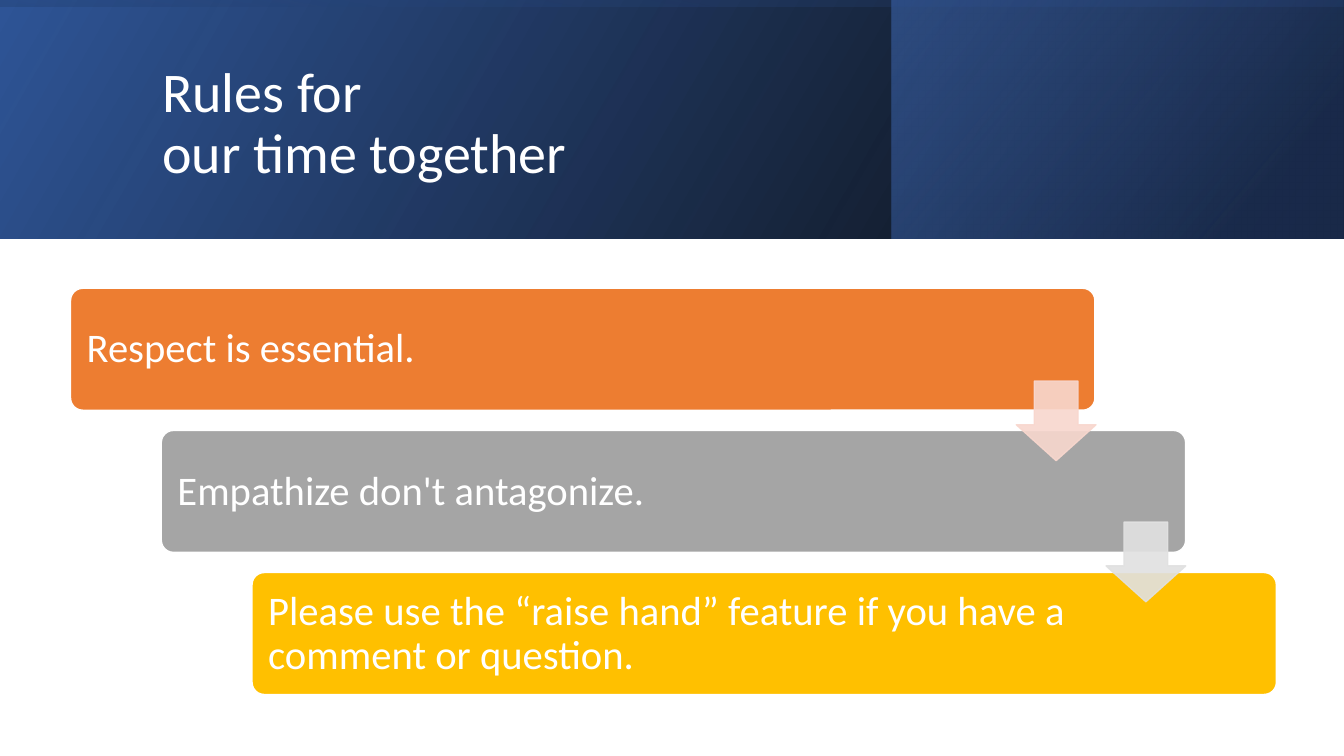
from lxml import etree
from pptx import Presentation, util as u
from pptx.dml.color import RGBColor
from pptx.enum import shapes, text
from pptx.oxml import parse_xml
from pptx.oxml.ns import nsdecls, qn

SHAPE = shapes.MSO_SHAPE
WHITE = "FFFFFF"
RULES = [
    ("Respect is essential.", "ED7D31"),
    ("Empathize don't antagonize.", "A5A5A5"),
    ("Please use the “raise hand” feature if you have a comment or question.", "FFC000"),
]
ARROW_COLORS = ["F8D7CE", "E1E1E1"]


def color(hex_code):
    return RGBColor.from_string(hex_code)


def set_opacity(fill_parent, percent):
    """Make every solid colour below the given XML element see-through."""
    for clr in fill_parent.iter(qn("a:srgbClr")):
        etree.SubElement(clr, qn("a:alpha")).set("val", str(percent * 1000))


class Deck:
    font = "Calibri"

    def __init__(self):
        self.prs = Presentation()
        self.prs.slide_width = u.Inches(13.33)
        self.prs.slide_height = u.Inches(7.5)
        self.slide = self.prs.slides.add_slide(self.prs.slide_layouts[6])

    def shape(self, preset, box, adjustments=()):
        item = self.slide.shapes.add_shape(preset, *map(u.Inches, box))
        item.shadow.inherit = False
        for i, value in enumerate(adjustments):
            item.adjustments[i] = value
        return item

    def gradient_band(self, box, stops, angle, rotation=0):
        """Mirrored rectangle; stops are (position %, colour, opacity %)."""
        band = self.shape(SHAPE.RECTANGLE, box)
        band.rotation = rotation
        band.line.fill.background()
        props = band._element.spPr
        props.xfrm.set("flipH", "1")
        stop_xml = "".join(
            f'<a:gs pos="{pos * 1000}"><a:srgbClr val="{hex_code}">'
            f'<a:alpha val="{opacity * 1000}"/></a:srgbClr></a:gs>'
            for pos, hex_code, opacity in stops)
        props.find(qn("a:prstGeom")).addnext(parse_xml(
            f'<a:gradFill {nsdecls("a")} rotWithShape="1"><a:gsLst>{stop_xml}</a:gsLst>'
            f'<a:lin ang="{angle * 60000}" scaled="0"/></a:gradFill>'))

    def solid(self, preset, box, fill, line, adjustments, opacity=100):
        item = self.shape(preset, box, adjustments)
        item.fill.solid()
        item.fill.fore_color.rgb = color(fill)
        item.line.color.rgb = color(line)
        item.line.width = u.Pt(1)
        if opacity < 100:
            set_opacity(item._element.spPr, opacity)

    def text(self, words, box, size, inset=(0.1, 0.05)):
        frame = self.slide.shapes.add_textbox(*map(u.Inches, box)).text_frame
        frame.word_wrap = True
        frame.vertical_anchor = text.MSO_ANCHOR.MIDDLE
        frame.margin_left = frame.margin_right = u.Inches(inset[0])
        frame.margin_top = frame.margin_bottom = u.Inches(inset[1])
        paragraph = frame.paragraphs[0]
        paragraph.text = words
        paragraph.line_spacing = 0.9
        for run in paragraph.runs:
            run.font.name = self.font
            run.font.size = u.Pt(size)
            run.font.color.rgb = color(WHITE)


def main():
    deck = Deck()

    deck.gradient_band((0, 0, 13.33, 2.37), [(0, "000000", 96), (100, "2F5597", 100)], 330)
    deck.gradient_band((8.84, 0, 4.48, 2.37), [(19, "203864", 68), (100, "4472C4", 48)], 320)
    deck.gradient_band((5.48, -5.48, 2.37, 13.33),
                       [(23, "2F5597", 16), (99, "000000", 45)], 350, rotation=270)
    deck.text("Rules for \nour time together", (1.51, 0.38, 10.63, 1.72), 40)

    for step, (rule, fill) in enumerate(RULES):
        left, top = 0.7 + 0.9 * step, 2.86 + 1.41 * step
        deck.solid(SHAPE.ROUNDED_RECTANGLE, (left, top, 10.16, 1.21), fill, WHITE, [0.1])
        deck.text(rule, (left + 0.04, top + 0.04, 8.4, 1.14), 29, inset=(0.12, 0.12))

    for step, fill in enumerate(ARROW_COLORS):
        deck.solid(SHAPE.DOWN_ARROW, (10.08 + 0.89 * step, 3.78 + 1.4 * step, 0.79, 0.79),
                   fill, fill, [0.55, 0.45], opacity=90)

    deck.prs.save("out.pptx")


if __name__ == "__main__":
    main()
